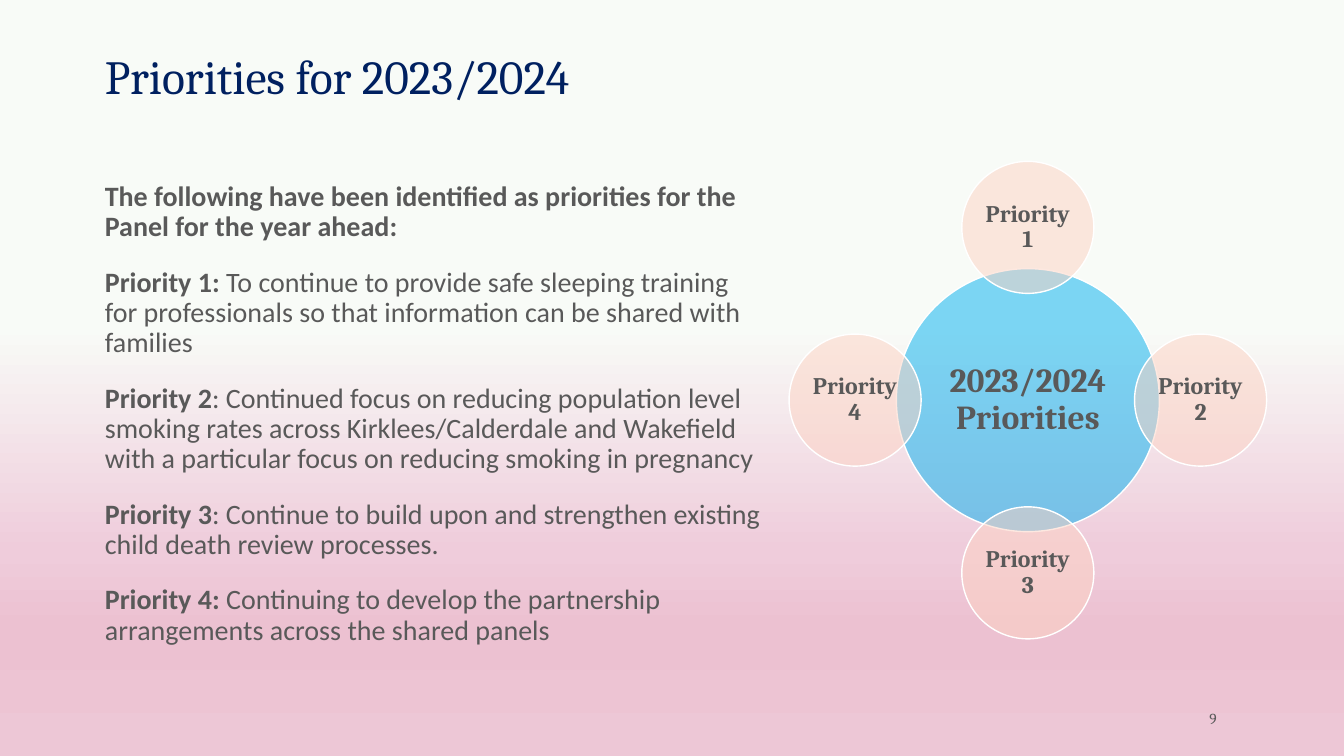
import math
from pptx import Presentation, util as u
from pptx.dml.color import RGBColor
from pptx.enum import shapes, text
from pptx.oxml import parse_xml
from pptx.oxml.ns import qn
from lxml import etree

theme = {
    "navy": "002060", "grey": "595959", "white": "FFFFFF",
    "hub": "00B0F0", "priority": "FDD3C3",
    "backdrop": [(43, "F8FBF7"), (73, "EFCCDB"), (83, "ECC1D1"), (100, "EDC7D6")],
    "heading_font": "Cambria", "body_font": "Calibri",
    "title_size": 34, "body_size": 20, "hub_size": 24, "priority_size": 17, "number_size": 11,
}

deck = Presentation()
deck.slide_width, deck.slide_height = u.Inches(40 / 3), u.Inches(7.5)
column, row = deck.slide_width / 100, deck.slide_height / 100
page = deck.slides.add_slide(deck.slide_layouts[1])


def place(box, left, top, width, height):
    values = {"left": left * column, "top": top * row, "width": width * column, "height": height * row}
    for name, value in values.items():
        setattr(box, name, round(value))


def write(para, words, size, font="heading_font", colour="grey", bold=False):
    span = para.add_run()
    span.text = words
    for name, value in {"size": u.Pt(theme[size]), "name": theme[font], "bold": bold}.items():
        setattr(span.font, name, value)
    span.font.color.rgb = RGBColor.from_string(theme[colour])


page.background.fill.gradient()
page.background.fill.gradient_angle = 270
stops = page.background.fill.gradient_stops
stop_list = page.background._cSld.find(".//" + qn("a:gsLst"))
for stop in list(stop_list):
    stop_list.remove(stop)
for position, colour in theme["backdrop"]:
    stop = etree.SubElement(stop_list, qn("a:gs"), pos=str(position * 1000))
    etree.SubElement(stop, qn("a:srgbClr"), val=colour)

title = page.shapes.title
place(title, 7.05, 6.67, 84.17, 7.87)
title.text_frame.vertical_anchor = text.MSO_ANCHOR.BOTTOM
title.text_frame.auto_size = text.MSO_AUTO_SIZE.NONE
heading = title.text_frame.paragraphs[0]
heading.alignment = text.PP_ALIGN.LEFT
heading.line_spacing = 0.9
write(heading, "Priorities for 2023/2024", "title_size", colour="navy")

priorities = [
    ("The following have been identified as priorities for the Panel for the year ahead:", ""),
    ("Priority 1: ", "To continue to provide safe sleeping training for professionals so that "
                     "information can be shared with families"),
    ("Priority 2", ": Continued focus on reducing population level smoking rates across "
                   "Kirklees/Calderdale and Wakefield with a particular focus on reducing smoking in pregnancy"),
    ("Priority 3", ": Continue to build upon and strengthen existing child death review processes."),
    ("Priority 4: ", "Continuing to develop the partnership arrangements across the shared panels"),
]
body = page.placeholders[1]
place(body, 7.05, 23.47, 50.71, 69.87)
body.text_frame.auto_size = text.MSO_AUTO_SIZE.NONE
for index, (lead, detail) in enumerate(priorities):
    para = body.text_frame.add_paragraph() if index else body.text_frame.paragraphs[0]
    para.line_spacing = 0.9
    para.space_before = u.Pt(18 if index else 0)
    properties = para._p.get_or_add_pPr()
    properties.set("marL", "0")
    properties.set("indent", "0")
    etree.SubElement(properties, qn("a:buNone"))
    write(para, lead, "body_size", "body_font", bold=True)
    if detail:
        write(para, detail, "body_size", "body_font")

hub_x, hub_y = 76.48, 52.93
hub_diameter, priority_diameter, orbit = 34.8, 17.47, 22.85
circles = [("2023/2024 Priorities", 0, 0, hub_diameter, "hub", "hub_size")]
for index in range(4):
    angle = math.radians(90 * index)
    circles.append((f"Priority {index + 1}", orbit * math.sin(angle), -orbit * math.cos(angle),
                    priority_diameter, "priority", "priority_size"))

for label, across, down, diameter, colour, size in circles:
    circle = page.shapes.add_shape(shapes.MSO_SHAPE.OVAL, 0, 0, 0, 0)
    width = diameter * row / column
    place(circle, hub_x + across * row / column - width / 2, hub_y + down - diameter / 2, width, diameter)
    circle.shadow.inherit = False
    circle.fill.solid()
    circle.fill.fore_color.rgb = RGBColor.from_string(theme[colour])
    tint = circle._element.spPr.find(qn("a:solidFill")).find(qn("a:srgbClr"))
    etree.SubElement(tint, qn("a:alpha"), val="50000")
    circle.line.color.rgb = RGBColor.from_string(theme["white"])
    circle.line.width = u.Pt(1)
    frame = circle.text_frame
    margins = dict.fromkeys(["margin_left", "margin_right", "margin_top", "margin_bottom"], u.Inches(0.02))
    for name, value in {**margins, "word_wrap": True, "vertical_anchor": text.MSO_ANCHOR.MIDDLE}.items():
        setattr(frame, name, value)
    para = frame.paragraphs[0]
    para.alignment = text.PP_ALIGN.CENTER
    para.line_spacing = 0.9
    write(para, label, size, bold=True)

number = page.shapes.add_textbox(0, 0, 0, 0)
place(number, 82.28, 93.33, 9, 3.33)
number.text_frame.word_wrap = True
number.text_frame.vertical_anchor = text.MSO_ANCHOR.MIDDLE
para = number.text_frame.paragraphs[0]
para.alignment = text.PP_ALIGN.RIGHT
write(para, "9", "number_size")

deck.save("out.pptx")
